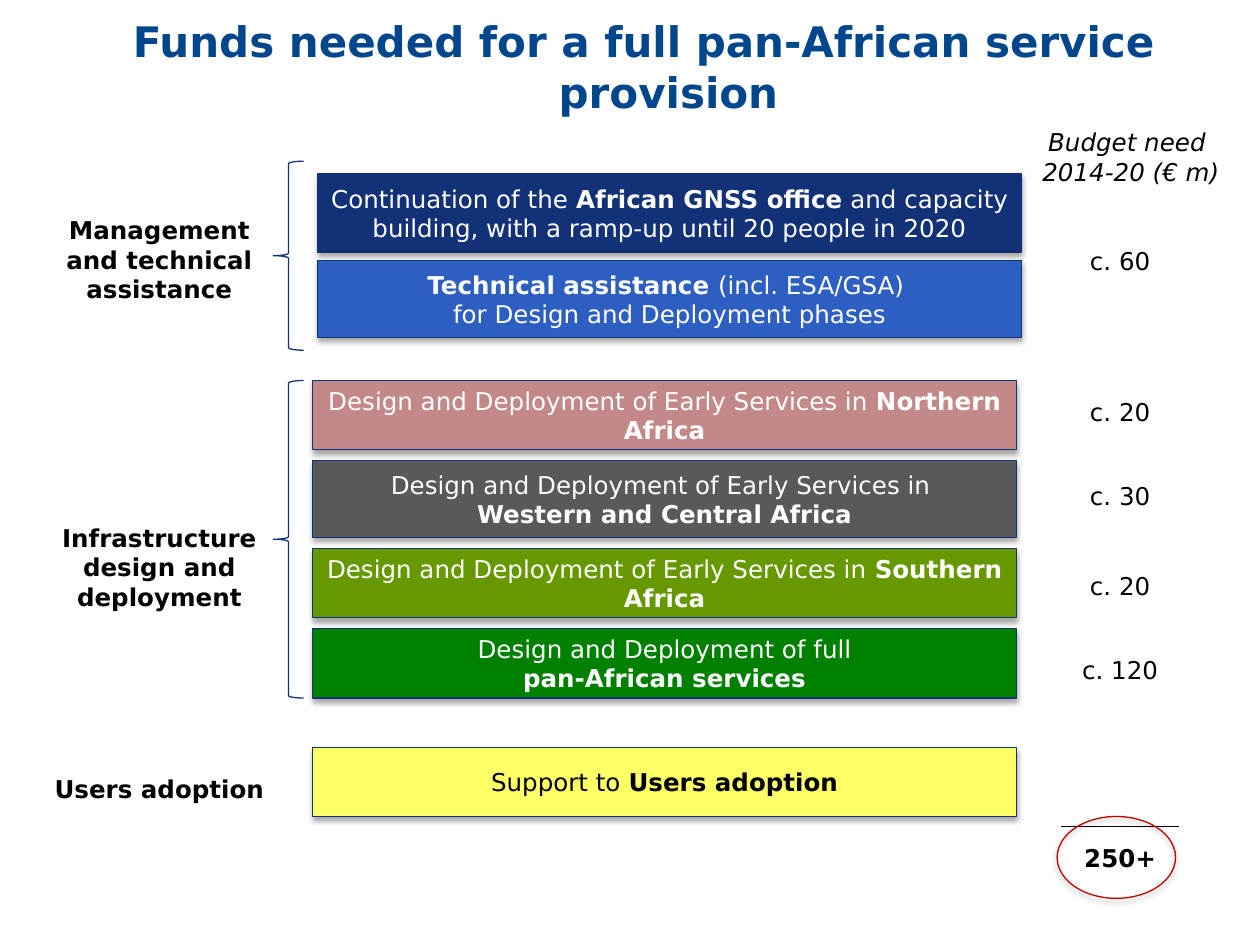
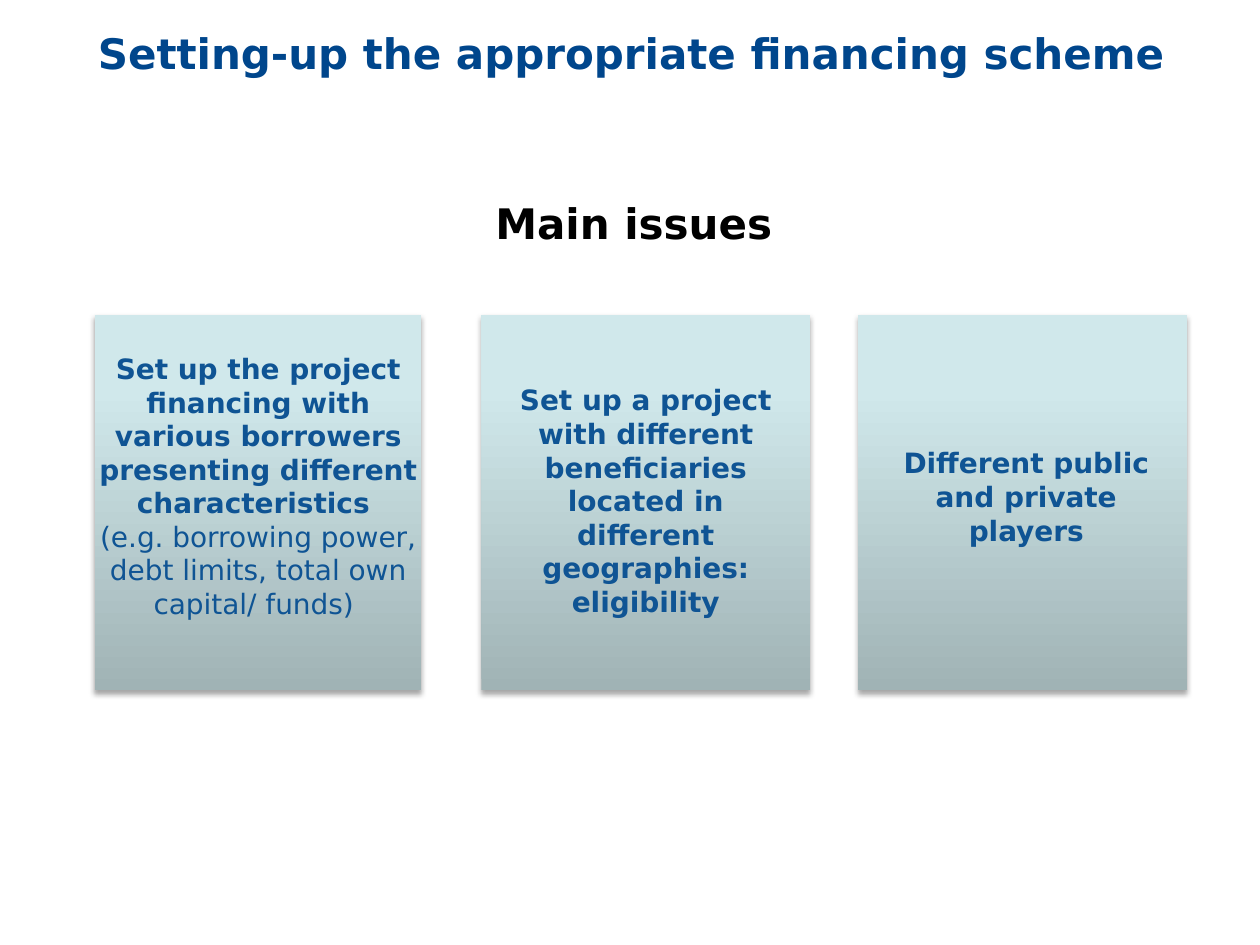
from lxml import etree
from pptx import Presentation
from pptx.dml.color import RGBColor
from pptx.enum import shapes, text
from pptx.oxml import ns
from pptx.util import Inches, Pt

FONT = "DejaVu Sans"
TITLE_BLUE = "00468C"
OUTLINE_BLUE = "133176"
CARD_BLUE = "0F5494"
BLACK = "000000"
WHITE = "FFFFFF"
CARD_STOPS = [(0, "A0B3B5"), (80, "D0E8EB"), (100, "D1EAEC")]

LABEL_LEFT, LABEL_WIDTH = 0.28, 1.97
BRACE_LEFT, BRACE_WIDTH = 2.17, 0.24
AMOUNT_LEFT, AMOUNT_WIDTH, AMOUNT_HEIGHT = 8.48, 0.82, 0.34
BAR_LEFT, BAR_WIDTH = 2.48, 5.59

GROUPS = [
    {
        "box": (2.52, 1.38, BAR_WIDTH, 1.3),
        "label": ("Management and technical assistance", 1.66, 0.81),
        "brace_margin": 0.1,
        "bars": [
            (0.62, "133176", WHITE, "Continuation of the *African GNSS office* and capacity building, "
                                    "with a ramp-up until 20 people in 2020"),
            (0.61, "2D5EC1", WHITE, "*Technical assistance *(incl. ESA/GSA) \vfor Design and Deployment phases"),
        ],
        "amounts": [("c. 60", 1.9)],
    },
    {
        "box": (BAR_LEFT, 3.02, BAR_WIDTH, 2.52),
        "label": ("Infrastructure design and deployment", 4.1, 0.81),
        "brace_margin": 0,
        "bars": [
            (0.55, "C38989", WHITE, "Design and Deployment of Early Services in *Northern Africa*"),
            (0.61, "595959", WHITE, "Design and Deployment of Early Services in \v*Western and Central Africa*"),
            (0.55, "669900", WHITE, "Design and Deployment of Early Services in *Southern Africa*"),
            (0.55, "008000", WHITE, "Design and Deployment of full\v*pan-African services*"),
        ],
        "amounts": [("c. 20", 3.1), ("c. 30", 3.77), ("c. 20", 4.48), ("c. 120", 5.15)],
    },
    {
        "box": (BAR_LEFT, 5.93, BAR_WIDTH, 0.55),
        "label": ("Users adoption", 6.09, 0.34),
        "brace_margin": None,
        "bars": [(0.55, "FFFF66", BLACK, "Support to *Users adoption*")],
        "amounts": [],
    },
]

ISSUES = [
    ((0.75, 2.5, 2.59, 2.98), (-0.07, 0.24, 2.74, 2.52), [
        "*Set up the project financing with various borrowers presenting different characteristics *",
        "(e.g. borrowing power, debt limits, total own capital/ funds) "]),
    ((3.82, 2.5, 2.61, 2.98), (0.08, 0.49, 2.45, 1.99), [
        "*Set up a project with different beneficiaries located in different geographies: eligibility*"]),
    ((6.81, 2.5, 2.61, 2.98), (0.11, 0.99, 2.45, 0.91), [
        "*Different public and private players*"]),
]


def color(value):
    return RGBColor.from_string(value)


def inches(box):
    return [Inches(length) for length in box]


def format_run(run, size, ink, bold, italic=False):
    run.font.name = FONT
    run.font.size = Pt(size)
    run.font.color.rgb = color(ink)
    run.font.bold = bold
    run.font.italic = italic


def write(frame, paragraphs, size, ink, italic=False):
    frame.word_wrap = True
    for number, markup in enumerate(paragraphs):
        paragraph = frame.paragraphs[0] if number == 0 else frame.add_paragraph()
        paragraph.alignment = text.PP_ALIGN.CENTER
        for part, piece in enumerate(markup.split("*")):
            for line, words in enumerate(piece.split("\v")):
                if line:
                    paragraph.add_line_break()
                if words:
                    run = paragraph.add_run()
                    run.text = words
                    format_run(run, size, ink, part % 2 == 1, italic)


def add_text(slide, box, paragraphs, size=14, ink=BLACK, italic=False):
    shape = slide.shapes.add_textbox(*inches(box))
    write(shape.text_frame, paragraphs, size, ink, italic)


def add_shape(slide, kind, box, fill=None, line=None, shadow=True):
    shape = slide.shapes.add_shape(kind, *inches(box))
    if fill:
        shape.fill.solid()
        shape.fill.fore_color.rgb = color(fill)
    else:
        shape.fill.background()
    if line:
        shape.line.color.rgb = color(line)
        shape.line.width = Pt(0.75)
    else:
        shape.line.fill.background()
    shape.shadow.inherit = False
    if shadow:
        effects = shape.element.spPr.find(ns.qn("a:effectLst"))
        outer = etree.SubElement(effects, ns.qn("a:outerShdw"), blurRad="40000", dist="23000",
                                 dir="5400000", rotWithShape="0")
        ink = etree.SubElement(outer, ns.qn("a:srgbClr"), val=BLACK)
        etree.SubElement(ink, ns.qn("a:alpha"), val="35000")
    return shape


def fill_gradient(shape, stops):
    shape.fill.gradient()
    shape.fill.gradient_angle = 90
    stop_list = shape.element.spPr.find(".//" + ns.qn("a:gsLst"))
    for stop in list(stop_list):
        stop_list.remove(stop)
    for position, value in stops:
        stop = etree.SubElement(stop_list, ns.qn("a:gs"), pos=str(position * 1000))
        etree.SubElement(stop, ns.qn("a:srgbClr"), val=value)


def add_titled_slide(presentation, title, box):
    slide = presentation.slides.add_slide(presentation.slide_layouts[5])
    shape = slide.shapes.title
    shape.left, shape.top, shape.width, shape.height = inches(box)
    frame = shape.text_frame
    frame.text = title
    frame.word_wrap = True
    frame.auto_size = text.MSO_AUTO_SIZE.NONE
    frame.vertical_anchor = text.MSO_ANCHOR.MIDDLE
    paragraph = frame.paragraphs[0]
    paragraph.alignment = text.PP_ALIGN.CENTER
    properties = paragraph._p.get_or_add_pPr()
    properties.set("marL", str(Inches(0.39)))
    properties.set("indent", str(-Inches(0.39)))
    format_run(paragraph.runs[0], 24, TITLE_BLUE, True)
    return slide


def add_amount(slide, amount, top):
    add_text(slide, (AMOUNT_LEFT, top, AMOUNT_WIDTH, AMOUNT_HEIGHT), [amount])


def add_budget_group(slide, box, label, brace_margin, bars, amounts):
    left, top, width, height = box
    words, label_top, label_height = label
    add_text(slide, (LABEL_LEFT, label_top, LABEL_WIDTH, label_height), [f"*{words}*"])
    if brace_margin is not None:
        brace_box = (BRACE_LEFT, top - brace_margin, BRACE_WIDTH, height + 2 * brace_margin)
        add_shape(slide, shapes.MSO_SHAPE.LEFT_BRACE, brace_box, line=OUTLINE_BLUE, shadow=False)
    gap = (height - sum(bar[0] for bar in bars)) / max(len(bars) - 1, 1)
    for bar_height, fill, ink, markup in bars:
        bar = add_shape(slide, shapes.MSO_SHAPE.RECTANGLE, (left, top, width, bar_height), fill, OUTLINE_BLUE)
        bar.text_frame.vertical_anchor = text.MSO_ANCHOR.MIDDLE
        write(bar.text_frame, [markup], 14, ink)
        top += bar_height + gap
    for amount, amount_top in amounts:
        add_amount(slide, amount, amount_top)


def add_total(slide, box):
    left, top, width, height = box
    rule = slide.shapes.add_connector(
        shapes.MSO_CONNECTOR.STRAIGHT,
        *inches((left + 0.03, top + 0.08, left + 0.97, top + 0.08)))
    rule.line.color.rgb = color(BLACK)
    rule.line.width = Pt(0.75)
    etree.SubElement(rule.element.spPr, ns.qn("a:effectLst"))
    add_amount(slide, "*250+*", top + 0.16)
    add_shape(slide, shapes.MSO_SHAPE.OVAL, box, line="C00000")


def add_issue_card(slide, box, text_box, paragraphs):
    card = add_shape(slide, shapes.MSO_SHAPE.RECTANGLE, box)
    fill_gradient(card, CARD_STOPS)
    left, top, width, height = text_box
    add_text(slide, (box[0] + left, box[1] + top, width, height), paragraphs, 16, CARD_BLUE)


def build_funds_slide(presentation):
    slide = add_titled_slide(presentation, "Funds needed for a full pan-African service provision",
                             (0.35, 0.07, 9.52, 0.91))
    add_text(slide, (8.07, 0.96, 1.81, 0.57), ["Budget need \v2014-20 (€ m)"], italic=True)
    for group in GROUPS:
        add_budget_group(slide, **group)
    add_total(slide, (8.39, 6.48, 0.94, 0.65))


def build_financing_slide(presentation):
    slide = add_titled_slide(presentation, "Setting-up the appropriate financing scheme",
                             (0.51, 0.17, 9, 0.5))
    add_text(slide, (3.73, 1.52, 2.6, 0.5), ["*Main issues*"], 24)
    for box, text_box, paragraphs in ISSUES:
        add_issue_card(slide, box, text_box, paragraphs)


def main():
    presentation = Presentation()
    presentation.slide_width = Inches(10)
    presentation.slide_height = Inches(7.5)
    build_funds_slide(presentation)
    build_financing_slide(presentation)
    presentation.save("out.pptx")


if __name__ == "__main__":
    main()
